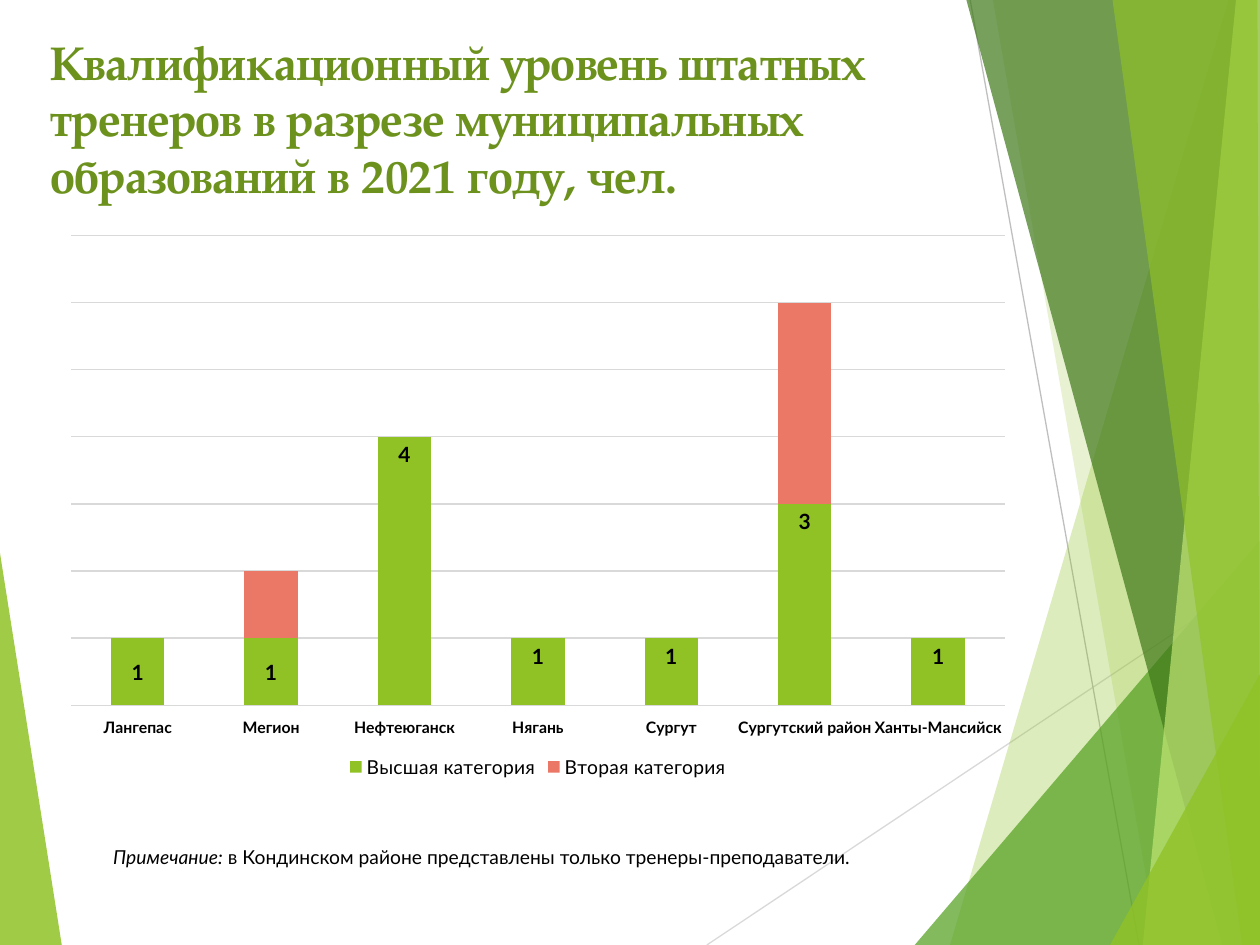
from lxml.etree import SubElement
from pptx import Presentation
from pptx.chart.data import CategoryChartData
from pptx.dml.color import RGBColor
from pptx.enum.chart import XL_CHART_TYPE as CT, XL_LABEL_POSITION as LP
from pptx.enum.chart import XL_LEGEND_POSITION, XL_TICK_MARK, XL_TICK_LABEL_POSITION
from pptx.enum.text import MSO_ANCHOR, PP_ALIGN
from pptx.oxml import parse_xml
from pptx.oxml.ns import nsdecls, qn
from pptx.util import Inches, Pt

LIME = RGBColor(0x90, 0xC2, 0x26)
GREEN = RGBColor(0x54, 0xA0, 0x21)
DARK = RGBColor(0x3F, 0x78, 0x19)
PALE = RGBColor(0xC0, 0xE4, 0x74)
OLIVE = RGBColor(0x6C, 0x92, 0x1D)
CORAL = RGBColor(0xEB, 0x77, 0x66)
BLACK = RGBColor(0, 0, 0)
GRID = RGBColor(0xD9, 0xD9, 0xD9)
GRAY = RGBColor(0xBF, 0xBF, 0xBF)
SERIF, SANS = "TeX Gyre Pagella", "Lato"
W, H = 10, 7.5

TITLE = ("Квалификационный уровень штатных тренеров в разрезе "
         "муниципальных образований в 2021 году, чел.")
NOTE = [("Примечание:", True),
        (" в Кондинском районе представлены только тренеры-преподаватели.", False)]
CITIES = ["Лангепас", "Мегион", "Нефтеюганск", "Нягань", "Сургут",
          "Сургутский район", "Ханты-Мансийск"]
SERIES = [("Высшая категория", [1, 1, 4, 1, 1, 3, 1], LIME),
          ("Вторая категория", [None, 1, None, None, None, 3, None], CORAL)]
CENTERED_LABELS = (0, 1)

LINES = [((5.61, H), (W, 4.57), GRID), ((7.7, 0), (9.04, H), GRAY)]
LEFT_FACET = ([(0, 4.39), (0.49, H), (0, H)], LIME, 85)
RIGHT_FACETS = [
    ([(9.75, 0), (7.54, H), (W, H), (W, 0)], LIME, 30),
    ([(7.88, 0), (9.19, H), (W, H), (W, 0)], LIME, 20),
    ([(7.26, H), (W, 4.29), (W, H)], GREEN, 72),
    ([(7.67, 0), (9.7, H), (W, H), (W, 0)], DARK, 70),
    ([(9.81, 0), (9.07, H), (W, H), (W, 0)], PALE, 70),
    ([(8.83, 0), (9.86, H), (W, H), (9.98, 0)], LIME, 65),
    ([(8.81, H), (W, 5.35), (W, H)], LIME, 80),
]


def style(font, size, color=BLACK, name=SANS, bold=False, italic=False):
    font.size, font.name = Pt(size), name
    font.bold, font.italic = bold, italic
    font.color.rgb = color


def add_text(p, text, **fmt):
    r = p.add_run()
    r.text = text
    style(r.font, **fmt)


def add_facet(shapes, points, color, alpha):
    start, *rest = [(Inches(x), Inches(y)) for x, y in points]
    fb = shapes.build_freeform(*start)
    fb.add_line_segments(rest, close=True)
    sp = fb.convert_to_shape()
    sp.shadow.inherit = False
    sp.line.fill.background()
    sp.fill.solid()
    sp.fill.fore_color.rgb = color
    clr = sp.fill._xPr.find(qn("a:solidFill"))[0]
    SubElement(clr, qn("a:alpha"), val=str(alpha * 1000))


def add_line(shapes, start, end, color):
    ends = [Inches(v) for v in (*start, *end)]
    cx = shapes.add_connector(1, *ends)
    cx.line.color.rgb, cx.line.width = color, Pt(0.75)
    SubElement(cx._element.spPr, qn("a:effectLst"))


def add_category_chart(shapes):
    data = CategoryChartData()
    data.categories = CITIES
    for name, values, _ in SERIES:
        data.add_series(name, values)
    box = [Inches(v) for v in (0.41, 1.78, 7.72, 4.44)]
    chart = shapes.add_chart(CT.COLUMN_STACKED, *box, data).chart
    style(chart.font, 10)
    chart.has_title = False
    chart.has_legend = True
    chart.legend.position = XL_LEGEND_POSITION.BOTTOM
    chart.legend.include_in_layout = False
    style(chart.legend.font, 11)

    cat = chart.category_axis
    cat.major_tick_mark = XL_TICK_MARK.NONE
    cat.tick_label_position = XL_TICK_LABEL_POSITION.LOW
    style(cat.tick_labels.font, 9, bold=True)
    val = chart.value_axis
    val.minimum_scale, val.maximum_scale, val.major_unit = 0, 7, 1
    val.visible = False
    val.has_major_gridlines = True
    for line in (cat.format.line, val.major_gridlines.format.line):
        line.color.rgb, line.width = GRID, Pt(0.75)

    plot = chart.plots[0]
    plot.gap_width, plot.overlap = 150, 100
    plot.vary_by_categories = False
    for ser, (_, _, color) in zip(plot.series, SERIES):
        ser.format.fill.solid()
        ser.format.fill.fore_color.rgb = color
    top = plot.series[0]
    labels = top.data_labels
    labels.show_value, labels.position = True, LP.INSIDE_END
    style(labels.font, 12, bold=True)
    for i in CENTERED_LABELS:
        label = top.points[i].data_label
        style(label.font, 12, bold=True)
        label.position = LP.CENTER

    area = chart._chartSpace.chart.plotArea
    for old in area.findall(qn("c:layout")):
        area.remove(old)
    parts = [("layoutTarget", "inner"), ("xMode", "edge"), ("yMode", "edge"),
             ("x", 0.02), ("y", 0.02), ("w", 0.96), ("h", 0.84)]
    inner = "".join(f'<c:{tag} val="{v}"/>' for tag, v in parts)
    area.insert(0, parse_xml(f'<c:layout {nsdecls("c")}><c:manualLayout>{inner}'
                             '</c:manualLayout></c:layout>'))


def main():
    prs = Presentation()
    prs.slide_width, prs.slide_height = Inches(W), Inches(H)
    slide = prs.slides.add_slide(prs.slide_layouts[5])
    shapes = slide.shapes

    add_facet(shapes, *LEFT_FACET)
    for line in LINES:
        add_line(shapes, *line)
    for facet in RIGHT_FACETS:
        add_facet(shapes, *facet)

    title = shapes.title
    title.left, title.top = Inches(0.3), Inches(0.21)
    title.width, title.height = Inches(7.69), Inches(1.25)
    tf = title.text_frame
    tf.word_wrap, tf.vertical_anchor = True, MSO_ANCHOR.TOP
    p = tf.paragraphs[0]
    p.alignment = PP_ALIGN.LEFT
    add_text(p, TITLE, size=27, color=OLIVE, name=SERIF, bold=True)

    add_category_chart(shapes)

    note = shapes.add_textbox(Inches(0.8), Inches(6.66), Inches(7.34), Inches(0.29))
    tf = note.text_frame
    tf.word_wrap = True
    p = tf.paragraphs[0]
    p.alignment = PP_ALIGN.JUSTIFY
    for text, italic in NOTE:
        add_text(p, text, size=11, italic=italic)

    prs.save("out.pptx")


if __name__ == "__main__":
    main()
